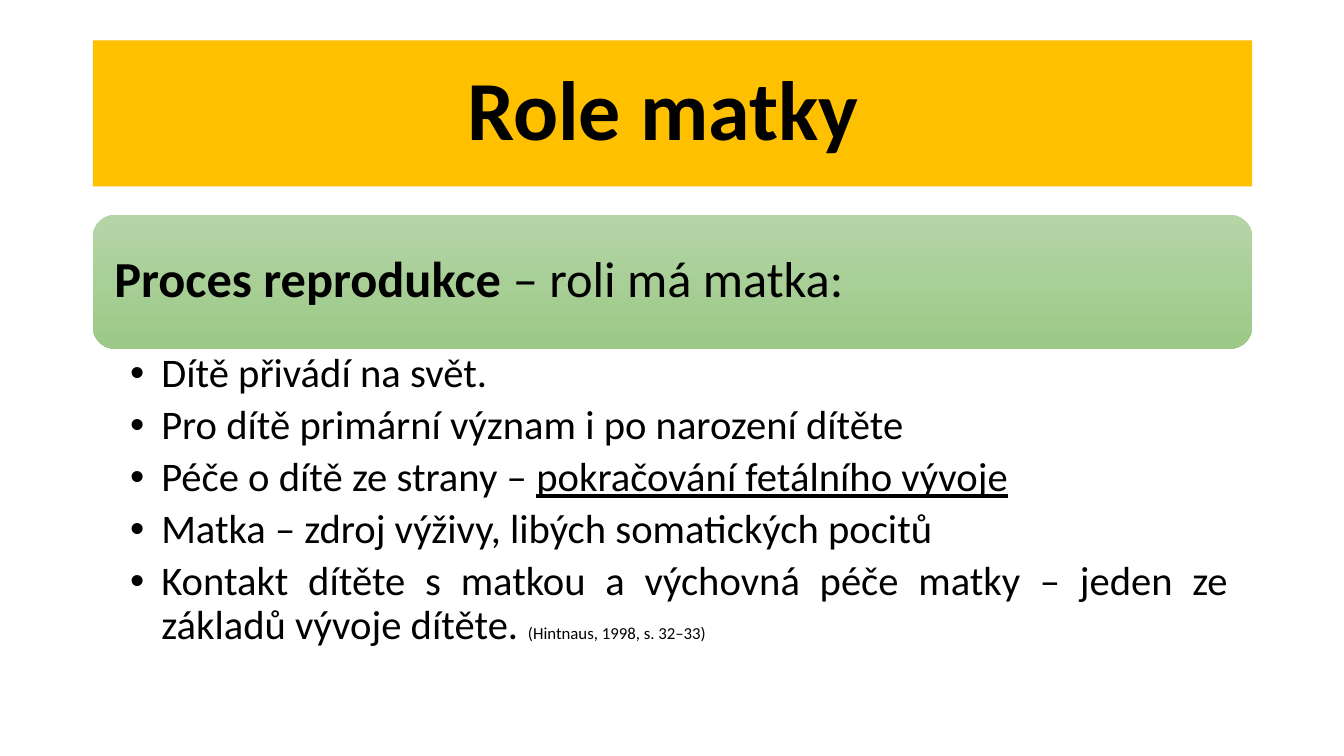
from pptx import Presentation
from pptx import util as u
from pptx.dml import color
from pptx.enum import shapes, text
from pptx.oxml import parse_xml
from pptx.oxml.ns import nsdecls

COLORS = {
    "text": "000000",
    "title_band": "FFC000",
    "heading_top": "B5D5A7",
    "heading_bottom": "9CC987",
}
LEFT, WIDTH = 0.92, 11.5


def rgb(name):
    return color.RGBColor.from_string(COLORS[name])


class SlideBuilder:
    """Holds the style and the current slide."""

    font = "Calibri"
    line_spacing = 0.9

    def __init__(self, deck):
        self.slide = deck.slides.add_slide(deck.slide_layouts[5])

    def add_run(self, paragraph, words, size, bold=False, underline=False):
        run = paragraph.add_run()
        run.text = words
        run.font.name = self.font
        run.font.size = u.Pt(size)
        run.font.bold = bold
        run.font.underline = underline
        run.font.color.rgb = rgb("text")

    def set_frame(self, frame, anchor, insets):
        frame.word_wrap = True
        frame.auto_size = text.MSO_AUTO_SIZE.NONE
        frame.vertical_anchor = anchor
        (frame.margin_left, frame.margin_top,
         frame.margin_right, frame.margin_bottom) = map(u.Inches, insets)

    def title(self, words, top, height, size):
        band = self.slide.shapes.title
        band.left, band.top = u.Inches(LEFT), u.Inches(top)
        band.width, band.height = u.Inches(WIDTH), u.Inches(height)
        band.fill.solid()
        band.fill.fore_color.rgb = rgb("title_band")
        self.set_frame(band.text_frame, text.MSO_ANCHOR.MIDDLE, (0.1, 0.05, 0.1, 0.05))
        paragraph = band.text_frame.paragraphs[0]
        paragraph.alignment = text.PP_ALIGN.CENTER
        paragraph.line_spacing = self.line_spacing
        self.add_run(paragraph, words, size, bold=True)

    def heading(self, runs, top, height, size):
        bar = self.slide.shapes.add_shape(
            shapes.MSO_SHAPE.ROUNDED_RECTANGLE,
            u.Inches(LEFT), u.Inches(top), u.Inches(WIDTH), u.Inches(height))
        bar.shadow.inherit = False
        bar.line.fill.background()
        bar.fill.gradient()
        bar.fill.gradient_angle = 270
        for stop, name in zip(bar.fill.gradient_stops, ("heading_top", "heading_bottom")):
            stop.color.rgb = rgb(name)
        self.set_frame(bar.text_frame, text.MSO_ANCHOR.MIDDLE, (0.15, 0.15, 0.15, 0.15))
        paragraph = bar.text_frame.paragraphs[0]
        paragraph.alignment = text.PP_ALIGN.LEFT
        paragraph.line_spacing = self.line_spacing
        for words, bold in runs:
            self.add_run(paragraph, words, size, bold=bold)

    def bullets(self, items, top, height, size):
        box = self.slide.shapes.add_textbox(
            u.Inches(LEFT), u.Inches(top), u.Inches(WIDTH), u.Inches(height))
        frame = box.text_frame
        self.set_frame(frame, text.MSO_ANCHOR.TOP, (0.37, 0.04, 0.23, 0.04))
        for index, item in enumerate(items):
            paragraph = frame.add_paragraph() if index else frame.paragraphs[0]
            paragraph.alignment = text.PP_ALIGN.JUSTIFY
            paragraph.level = 1
            paragraph.line_spacing = self.line_spacing
            paragraph.space_after = u.Pt(size * 0.2)
            self.add_bullet(paragraph, 0.31)
            for words, style in item:
                self.add_run(paragraph, words, **{"size": size, **style})

    def add_bullet(self, paragraph, indent):
        properties = paragraph._p.get_or_add_pPr()
        properties.set("marL", str(u.Inches(indent)))
        properties.set("indent", str(-u.Inches(indent)))
        for tag in ('buFont typeface="Arial"', 'buChar char="•"'):
            properties.append(parse_xml(f"<a:{tag} {nsdecls('a')}/>"))


def main():
    deck = Presentation()
    deck.slide_width, deck.slide_height = u.Inches(13.33), u.Inches(7.5)
    mother_role = SlideBuilder(deck)

    # Title band
    mother_role.title("Role matky ", top=0.4, height=1.45, size=60)

    # Green heading bar
    mother_role.heading(
        [("Proces reprodukce", True), (" – roli má matka:", False)],
        top=2.13, height=1.33, size=36)

    # Points about the mother's role
    mother_role.bullets([
        [("Dítě přivádí na svět.", {})],
        [("Pro dítě primární význam i po narození dítěte", {})],
        [("Péče o dítě ze strany – ", {}),
         ("pokračování fetálního vývoje", {"underline": True})],
        [("Matka – zdroj výživy, libých somatických pocitů", {})],
        [("Kontakt dítěte s matkou a výchovná péče matky – jeden ze základů vývoje dítěte. ", {}),
         ("(Hintnaus, 1998, s. 32–33) ", {"size": 12})],
    ], top=3.46, height=3.16, size=29)

    deck.save("out.pptx")


if __name__ == "__main__":
    main()
